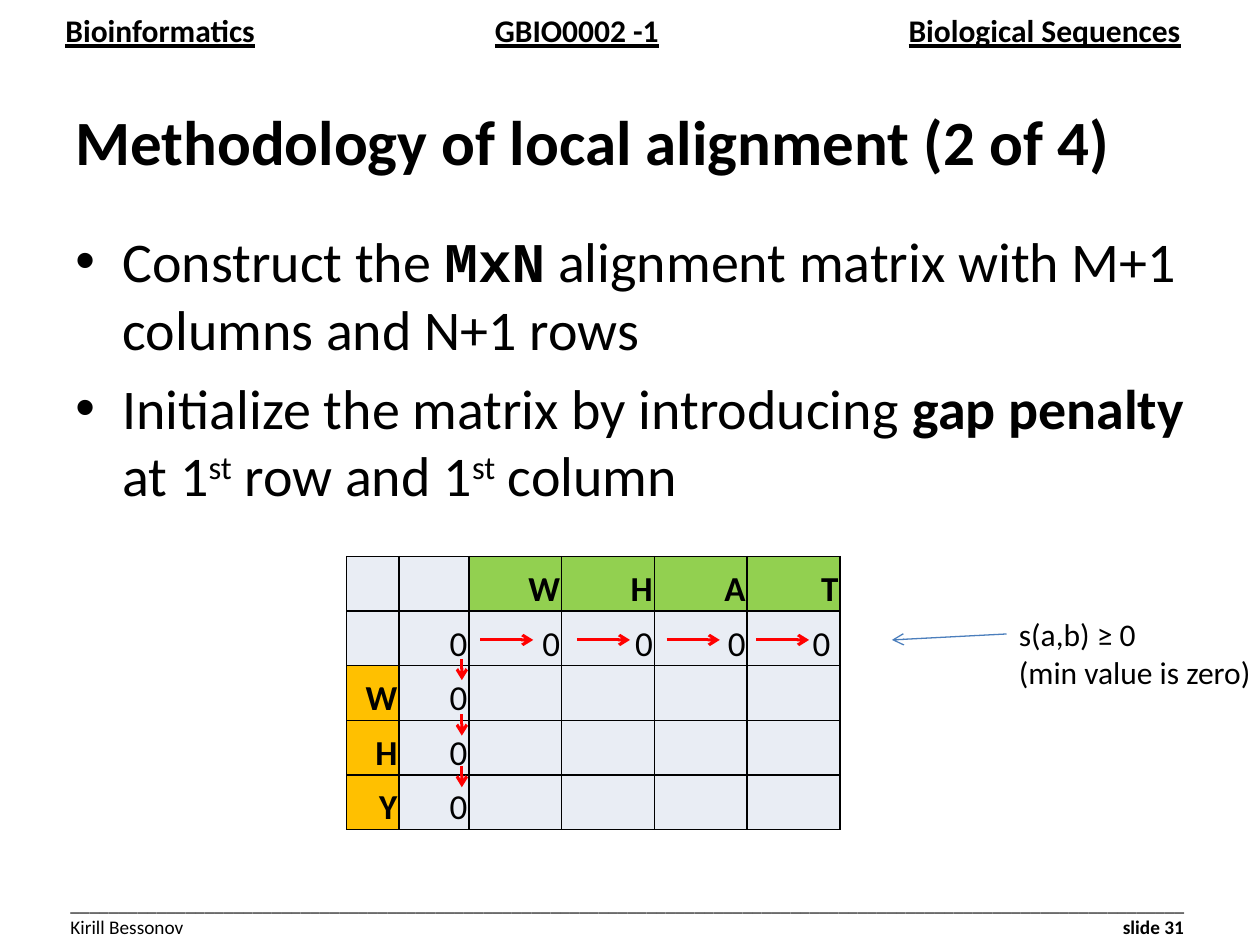
from dataclasses import dataclass

from lxml import etree
from pptx import Presentation
from pptx.dml.color import RGBColor
from pptx.enum.shapes import MSO_CONNECTOR
from pptx.enum.text import MSO_ANCHOR, PP_ALIGN
from pptx.oxml.ns import qn
from pptx.util import Cm, Pt

STRAIGHT = MSO_CONNECTOR.STRAIGHT
MIDDLE, BOTTOM = MSO_ANCHOR.MIDDLE, MSO_ANCHOR.BOTTOM
RIGHT = PP_ALIGN.RIGHT
BLACK, RED, BLUE = "000000", "FF0000", "4B7EBC"
PALE, GREEN, AMBER = "E9EDF4", "92D050", "FFC000"


@dataclass
class Piece:
    text: str
    bold: bool | None = None
    face: str | None = None
    superscript: bool = False


@dataclass
class Line:
    pieces: list[Piece]
    size: float
    bold: bool = False
    underline: bool = False
    bulleted: bool = False
    tabs: tuple[tuple[str, float], ...] = ()


@dataclass
class Arrow:
    x1: float
    y1: float
    x2: float
    y2: float
    color: str = RED
    width: float = 1.75


def rgb(code: str) -> RGBColor:
    return RGBColor.from_string(code)


def style_font(font, size: float, bold: bool) -> None:
    font.name = "Calibri"
    font.size = Pt(size)
    font.bold = bold
    font.color.rgb = rgb(BLACK)


def write_line(paragraph, line: Line) -> None:
    properties = paragraph._p.get_or_add_pPr()
    if line.bulleted:
        properties.set("marL", str(Cm(0.95)))
        properties.set("indent", str(-Cm(0.95)))
        paragraph.space_before = Pt(7)
        etree.SubElement(properties, qn("a:buFont"), typeface="Arial")
        etree.SubElement(properties, qn("a:buChar"), char="•")
    if line.tabs:
        stops = etree.SubElement(properties, qn("a:tabLst"))
        for side, position in line.tabs:
            etree.SubElement(stops, qn("a:tab"), pos=str(Cm(position)), algn=side)
    style_font(paragraph.font, line.size, line.bold)
    if line.underline:
        paragraph.font.underline = True
    for piece in line.pieces:
        run = paragraph.add_run()
        run.text = piece.text
        if piece.bold is not None:
            run.font.bold = piece.bold
        if piece.face:
            run.font.name = piece.face
        if piece.superscript:
            run._r.get_or_add_rPr().set("baseline", "30000")


def add_text(slide, left: float, top: float, width: float, height: float,
             lines: list[Line], wrap: bool = True, anchor=None) -> None:
    frame = slide.shapes.add_textbox(Cm(left), Cm(top), Cm(width), Cm(height)).text_frame
    frame.word_wrap = wrap
    if anchor is not None:
        frame.vertical_anchor = anchor
    for index, line in enumerate(lines):
        write_line(frame.add_paragraph() if index else frame.paragraphs[0], line)


def add_arrow(slide, arrow: Arrow) -> None:
    connector = slide.shapes.add_connector(
        STRAIGHT, Cm(arrow.x1), Cm(arrow.y1), Cm(arrow.x2), Cm(arrow.y2))
    connector.line.color.rgb = rgb(arrow.color)
    connector.line.width = Pt(arrow.width)
    properties = connector._element.find(qn("p:spPr"))
    etree.SubElement(properties.find(qn("a:ln")), qn("a:tailEnd"), type="arrow")
    etree.SubElement(properties, qn("a:effectLst"))


def style_cell(cell, text: str, fill: str) -> None:
    properties = cell._tc.get_or_add_tcPr()
    for side in ("lnL", "lnR", "lnT", "lnB"):
        border = etree.SubElement(properties, qn(f"a:{side}"), w=str(Pt(1)))
        solid = etree.SubElement(border, qn("a:solidFill"))
        etree.SubElement(solid, qn("a:srgbClr"), val=BLACK)
    cell.fill.solid()
    cell.fill.fore_color.rgb = rgb(fill)
    cell.margin_left = cell.margin_right = cell.margin_top = Cm(0.03)
    cell.margin_bottom = 0
    cell.vertical_anchor = BOTTOM
    paragraph = cell.text_frame.paragraphs[0]
    paragraph.alignment = RIGHT
    style_font(paragraph.font, 20, fill != PALE)
    if text:
        paragraph.add_run().text = text


def add_matrix(slide, across: str, down: str) -> None:
    widths = [1.05, 1.41] + [1.87] * len(across)
    row_count, row_height = len(down) + 2, 1.1
    matrix = slide.shapes.add_table(
        row_count, len(widths), Cm(6.99), Cm(11.22),
        Cm(sum(widths)), Cm(row_count * row_height)).table
    for column, width in zip(matrix.columns, widths):
        column.width = Cm(width)
    for r, row in enumerate(matrix.rows):
        row.height = Cm(row_height)
        for c, cell in enumerate(row.cells):
            if r == 0 and c > 1:
                style_cell(cell, across[c - 2], GREEN)
            elif c == 0 and r > 1:
                style_cell(cell, down[r - 2], AMBER)
            else:
                gap_cell = (r == 1 and c > 0) or (c == 1 and r > 0)
                style_cell(cell, "0" if gap_cell else "", PALE)
    matrix.cell(1, len(widths) - 1).margin_right = Cm(0.19)


def main() -> None:
    deck = Presentation()
    deck.slide_width, deck.slide_height = Cm(25.4), Cm(19.05)
    slide = deck.slides.add_slide(deck.slide_layouts[6])

    add_text(slide, 1.07, 0.1, 23.93, 1.02, [
        Line([Piece("Bioinformatics\tGBIO0002 -1\tBiological Sequences")], 18,
             bold=True, underline=True, tabs=(("ctr", 10.31), ("r", 22.48)))])
    add_text(slide, 1.17, 17.86, 23.19, 1.19, [
        Line([Piece("_" * 116)], 11),
        Line([Piece("Kirill Bessonov\t"), Piece("slide 31", bold=True)], 11,
             tabs=(("r", 22.45),))])
    add_text(slide, 1.27, 1.7, 22.86, 2.24, [
        Line([Piece("Methodology of local alignment (2 of 4)")], 36, bold=True)],
        anchor=MIDDLE)
    add_text(slide, 1.27, 4.45, 22.86, 13.41, [
        Line([Piece("Construct the "),
              Piece("MxN", bold=True, face="Courier New"),
              Piece(" alignment matrix with M+1 columns and N+1 rows")],
             32, bulleted=True),
        Line([Piece("Initialize the matrix by introducing "),
              Piece("gap penalty ", bold=True),
              Piece("at 1"), Piece("st", superscript=True),
              Piece(" row and 1"), Piece("st", superscript=True),
              Piece(" column")], 32, bulleted=True)])

    add_matrix(slide, "WHAT", "WHY")
    for start in (9.68, 11.63, 13.44, 15.24):
        add_arrow(slide, Arrow(start, 12.9, start + 1.07, 12.9))
    for start in (13.28, 14.4, 15.44):
        add_arrow(slide, Arrow(9.31, start, 9.31, start + 0.43))

    add_text(slide, 20.29, 12.27, 5.23, 1.8, [
        Line([Piece("s(a,b) ≥ 0")], 18),
        Line([Piece("(min value is zero)")], 18)], wrap=False)
    add_arrow(slide, Arrow(20.29, 12.78, 17.98, 12.9, BLUE, 0.75))

    deck.save("out.pptx")


if __name__ == "__main__":
    main()
